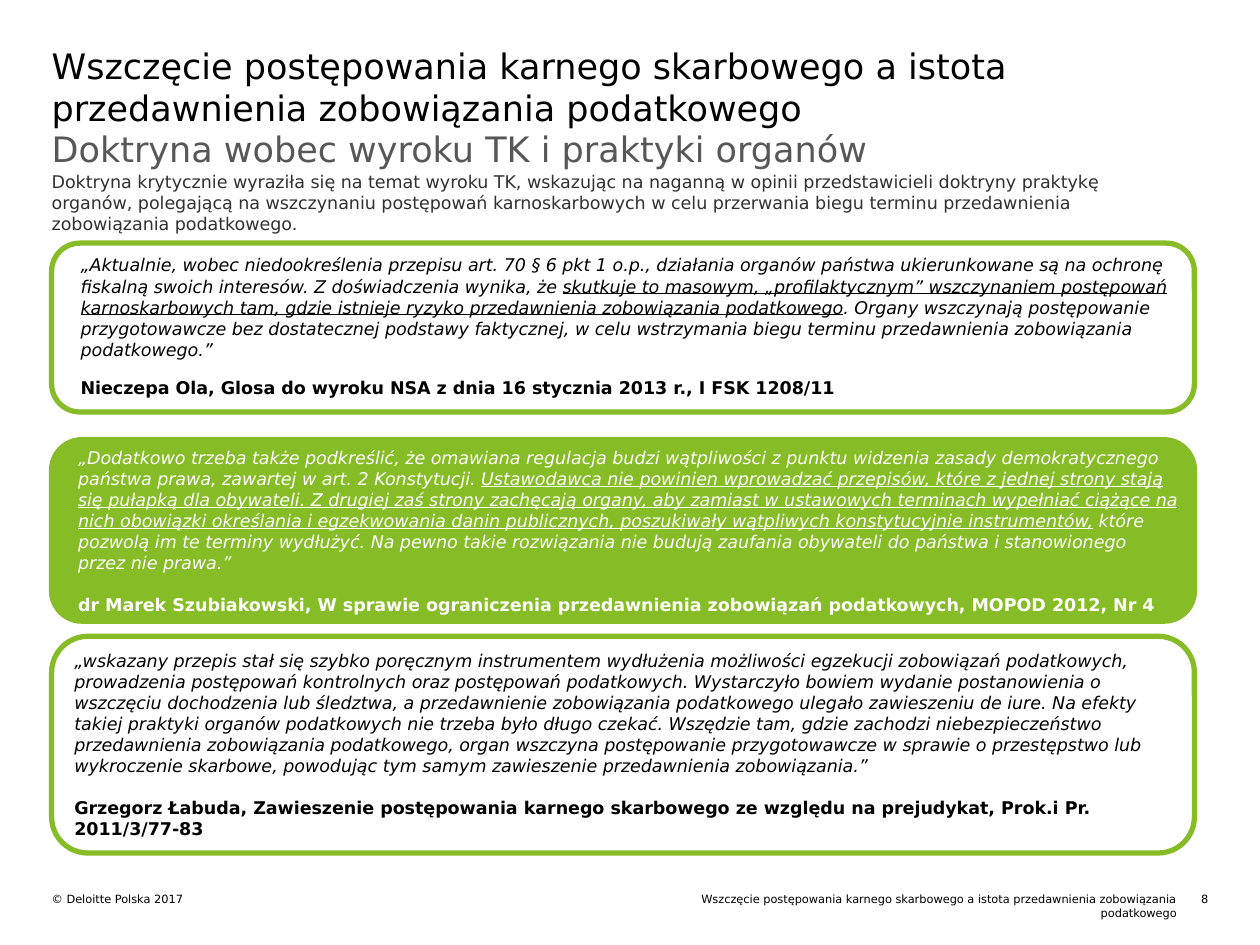
"""Build a slide with three quotations from legal doctrine on the limitation of tax liabilities."""
import pptx
import pptx.dml.color
import pptx.enum.shapes
import pptx.enum.text
import pptx.util

FONT = "DejaVu Sans"
COLORS = {"black": "000000", "grey": "575757", "dark": "313131", "green": "86BC25", "white": "FFFFFF"}
TITLE = "Wszczęcie postępowania karnego skarbowego a istota przedawnienia zobowiązania podatkowego"
LEFT, RIGHT = pptx.enum.text.PP_ALIGN.LEFT, pptx.enum.text.PP_ALIGN.RIGHT

LABELS = [
    (TITLE, (0.41, 0.35, 9.18, 0.66), 20, "black", LEFT),
    ("Doktryna wobec wyroku TK i praktyki organów", (0.41, 1.01, 9.18, 0.35), 20, "grey", LEFT),
    ("Doktryna krytycznie wyraziła się na temat wyroku TK, wskazując na naganną w opinii przedstawicieli "
     "doktryny praktykę organów, polegającą na wszczynaniu postępowań karnoskarbowych w celu przerwania "
     "biegu terminu przedawnienia zobowiązania podatkowego.", (0.41, 1.36, 8.89, 0.5), 10, "dark", LEFT),
    ("© Deloitte Polska 2017", (0.41, 7.08, 4.39, 0.11), 6.5, "black", LEFT),
    (TITLE, (5.32, 7.08, 4.02, 0.22), 6.5, "black", RIGHT),
    ("8", (9.34, 7.08, 0.25, 0.11), 6.5, "black", RIGHT),
]

QUOTES = [
    {
        "frame": (1.93, 1.34), "fill": None, "color": "black", "text_box": (0.64, 2.02, 8.7, 1.2), "gap": 10,
        "quote": [
            ("„Aktualnie, wobec niedookreślenia przepisu art. 70 § 6 pkt 1 o.p., działania organów państwa "
             "ukierunkowane są na ochronę fiskalną swoich interesów. Z doświadczenia wynika, że ", False),
            ("skutkuje to masowym, „profilaktycznym” wszczynaniem postępowań karnoskarbowych tam, gdzie "
             "istnieje ryzyko przedawnienia zobowiązania podatkowego", True),
            (". Organy wszczynają postępowanie przygotowawcze bez dostatecznej podstawy faktycznej, w celu "
             "wstrzymania biegu terminu przedawnienia zobowiązania podatkowego.”", False),
        ],
        "author": "Nieczepa Ola, Glosa do wyroku NSA z dnia 16 stycznia 2013 r., I FSK 1208/11",
    },
    {
        "frame": (3.49, 1.44), "fill": "green", "color": "white", "text_box": (0.62, 3.55, 8.73, 1.35), "gap": 12,
        "quote": [
            ("„Dodatkowo trzeba także podkreślić, że omawiana regulacja budzi wątpliwości z punktu widzenia "
             "zasady demokratycznego państwa prawa, zawartej w art. 2 Konstytucji. ", False),
            ("Ustawodawca nie powinien wprowadzać przepisów, które z jednej strony stają się pułapką dla "
             "obywateli. Z drugiej zaś strony zachęcają organy, aby zamiast w ustawowych terminach wypełniać "
             "ciążące na nich obowiązki określania i egzekwowania danin publicznych, poszukiwały wątpliwych "
             "konstytucyjnie instrumentów,", True),
            (" które pozwolą im te terminy wydłużyć. Na pewno takie rozwiązania nie budują zaufania obywateli "
             "do państwa i stanowionego przez nie prawa.”", False),
        ],
        "author": "dr Marek Szubiakowski, W sprawie ograniczenia przedawnienia zobowiązań podatkowych, "
                  "MOPOD 2012, Nr 4",
    },
    {
        "frame": (5.05, 1.72), "fill": "white", "color": "black", "text_box": (0.59, 5.16, 8.72, 1.51), "gap": 12,
        "quote": [
            ("„wskazany przepis stał się szybko poręcznym instrumentem wydłużenia możliwości egzekucji "
             "zobowiązań podatkowych, prowadzenia postępowań kontrolnych oraz postępowań podatkowych. "
             "Wystarczyło bowiem wydanie postanowienia o wszczęciu dochodzenia lub śledztwa, a przedawnienie "
             "zobowiązania podatkowego ulegało zawieszeniu de iure. Na efekty takiej praktyki organów "
             "podatkowych nie trzeba było długo czekać. Wszędzie tam, gdzie zachodzi niebezpieczeństwo "
             "przedawnienia zobowiązania podatkowego, organ wszczyna postępowanie przygotowawcze w sprawie "
             "o przestępstwo lub wykroczenie skarbowe, powodując tym samym zawieszenie przedawnienia "
             "zobowiązania.”", False),
        ],
        "author": "Grzegorz Łabuda, Zawieszenie postępowania karnego skarbowego ze względu na prejudykat, "
                  "Prok.i Pr. 2011/3/77-83",
    },
]


def color_of(name):
    return pptx.dml.color.RGBColor.from_string(COLORS[name])


def inches(values):
    return [pptx.util.Inches(value) for value in values]


def add_text_frame(slide, box):
    text_frame = slide.shapes.add_textbox(*inches(box)).text_frame
    text_frame.word_wrap = True
    text_frame.margin_left = text_frame.margin_right = 0
    text_frame.margin_top = text_frame.margin_bottom = 0
    return text_frame


def add_run(paragraph, text, size, color, italic=False, bold=False, underline=False):
    run = paragraph.add_run()
    run.text = text
    run.font.name = FONT
    run.font.size = pptx.util.Pt(size)
    run.font.color.rgb = color_of(color)
    run.font.italic = italic
    run.font.bold = bold
    run.font.underline = underline


def add_label(slide, text, box, size, color, alignment):
    paragraph = add_text_frame(slide, box).paragraphs[0]
    paragraph.alignment = alignment
    add_run(paragraph, text, size, color)


def add_quote(slide, item):
    top, height = item["frame"]
    frame = slide.shapes.add_shape(
        pptx.enum.shapes.MSO_SHAPE.ROUNDED_RECTANGLE, *inches((0.41, top, 9.07, height)))
    frame.shadow.inherit = False
    frame.line.color.rgb = color_of("green")
    frame.line.width = pptx.util.Pt(3)
    if item["fill"]:
        frame.fill.solid()
        frame.fill.fore_color.rgb = color_of(item["fill"])
    else:
        frame.fill.background()

    text_frame = add_text_frame(slide, item["text_box"])
    paragraph = text_frame.paragraphs[0]
    paragraph.space_after = pptx.util.Pt(item["gap"])
    for text, underline in item["quote"]:
        add_run(paragraph, text, 10, item["color"], italic=True, underline=underline)
    add_run(text_frame.add_paragraph(), item["author"], 10, item["color"], bold=True)


def main():
    presentation = pptx.Presentation()
    presentation.slide_width, presentation.slide_height = inches((10, 7.5))
    slide = presentation.slides.add_slide(presentation.slide_layouts[6])
    for label in LABELS:
        add_label(slide, *label)
    for item in QUOTES:
        add_quote(slide, item)
    presentation.save("out.pptx")


if __name__ == "__main__":
    main()
